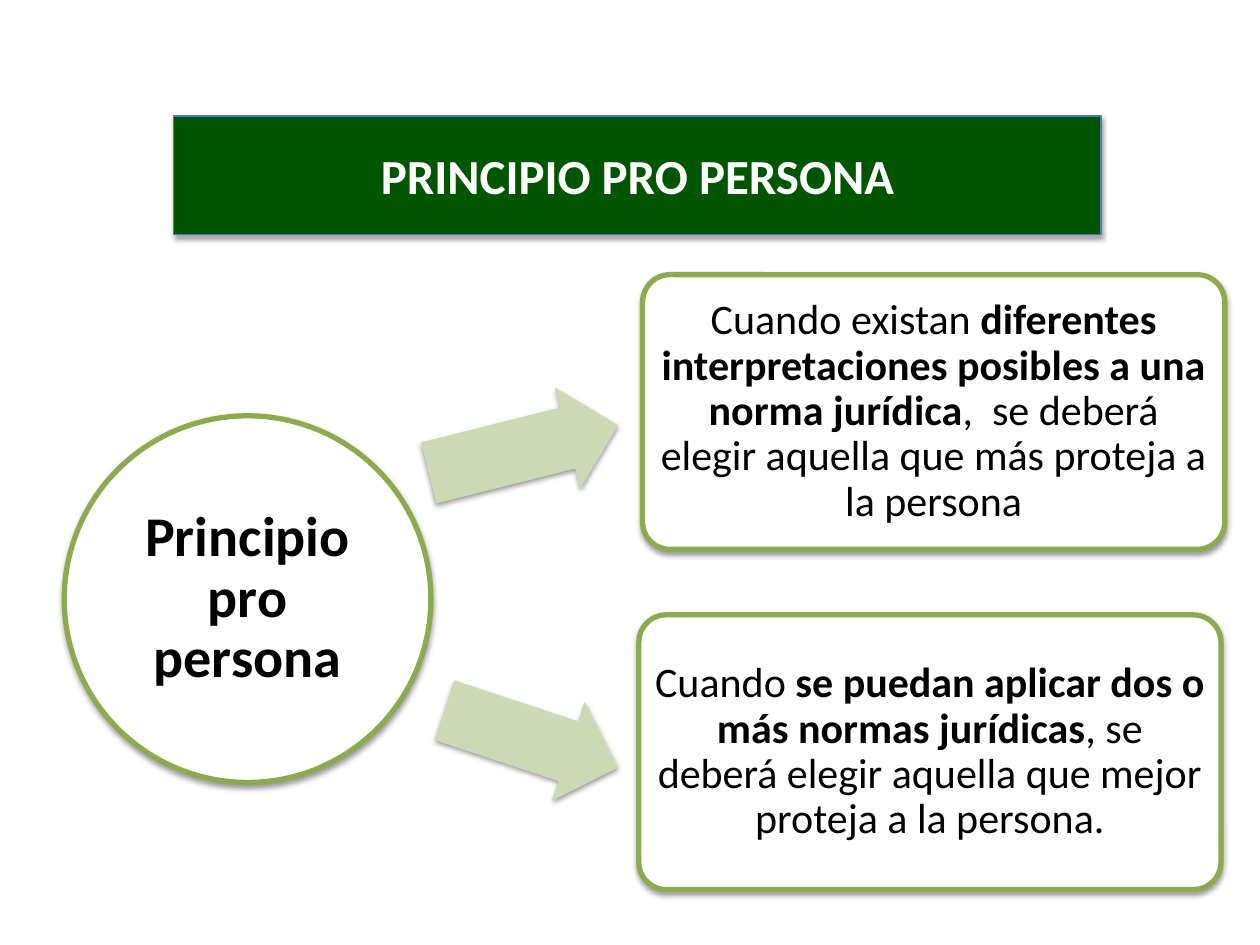
"""Build the slide on the pro persona principle."""
from lxml.etree import SubElement
from pptx import Presentation
from pptx.dml.color import RGBColor
from pptx.enum.shapes import MSO_SHAPE
from pptx.enum.text import MSO_ANCHOR, PP_ALIGN
from pptx.oxml.ns import qn
from pptx.util import Inches, Pt


def paint(shape, fill, line=None, width=3, alpha=38, drop=1.6):
    shape.fill.solid()
    shape.fill.fore_color.rgb = RGBColor.from_string(fill)
    if line:
        shape.line.color.rgb = RGBColor.from_string(line)
        shape.line.width = Pt(width)
    else:
        shape.line.fill.background()
    shape.shadow.inherit = False
    effects = shape.element.spPr.find(qn("a:effectLst"))
    shade = SubElement(effects, qn("a:outerShdw"), blurRad=str(Pt(3.1)),
                       dist=str(Pt(drop)), dir="5400000", rotWithShape="0")
    color = SubElement(shade, qn("a:srgbClr"), val="000000")
    SubElement(color, qn("a:alpha"), val=str(alpha * 1000))


def write(shape, parts, size, color="000000", inset=0.05, space=0.9):
    frame = shape.text_frame
    frame.word_wrap = True
    frame.vertical_anchor = MSO_ANCHOR.MIDDLE
    frame.margin_left = frame.margin_right = Inches(inset)
    frame.margin_top = frame.margin_bottom = Inches(inset)
    par = frame.paragraphs[0]
    par.alignment = PP_ALIGN.CENTER
    par.line_spacing = space
    par.font.name = "Calibri"
    par.font.size = Pt(size)
    par.font.color.rgb = RGBColor.from_string(color)
    for text, bold in parts:
        run = par.add_run()
        run.text = text
        run.font.bold = bold


deck = Presentation()
deck.slide_width, deck.slide_height = Inches(10), Inches(7.5)
shapes = deck.slides.add_slide(deck.slide_layouts[6]).shapes

circle = shapes.add_shape(MSO_SHAPE.OVAL, Inches(0.51), Inches(3.3), Inches(2.91), Inches(2.91))
paint(circle, "FFFFFF", "8DAA51")
write(circle, [("Principio pro persona", True)], 32, inset=0.02)

arrows = [(3.38, 3.15, 1.55, -14.1), (3.49, 5.45, 1.45, 18.3)]
for left, top, width, turn in arrows:
    arrow = shapes.add_shape(MSO_SHAPE.RIGHT_ARROW, Inches(left), Inches(top),
                             Inches(width), Inches(0.83))
    arrow.adjustments[0] = 0.6
    arrow.rotation = turn
    paint(arrow, "CBDAB5")

cases = [
    (5.1, 2.18, [
        ("Cuando existan ", False),
        ("diferentes interpretaciones posibles a una norma jurídica", True),
        (",  se deberá elegir aquella que más proteja a la persona", False)]),
    (5.07, 4.88, [
        ("Cuando ", False),
        ("se puedan aplicar dos o más normas jurídicas", True),
        (", se deberá elegir aquella que mejor proteja a la persona.", False)]),
]
for left, top, parts in cases:
    box = shapes.add_shape(MSO_SHAPE.ROUNDED_RECTANGLE, Inches(left), Inches(top),
                           Inches(4.62), Inches(2.18))
    box.adjustments[0] = 0.1
    paint(box, "FFFFFF", "8DAA51")
    write(box, parts, 24)

title = shapes.add_shape(MSO_SHAPE.RECTANGLE, Inches(1.38), Inches(0.92), Inches(7.36), Inches(0.94))
paint(title, "005600", "4A7EBB", width=0.75, alpha=35, drop=1.8)
write(title, [("PRINCIPIO PRO PERSONA", True)], 28, "FFFFFF", space=1.0)

deck.save("out.pptx")
